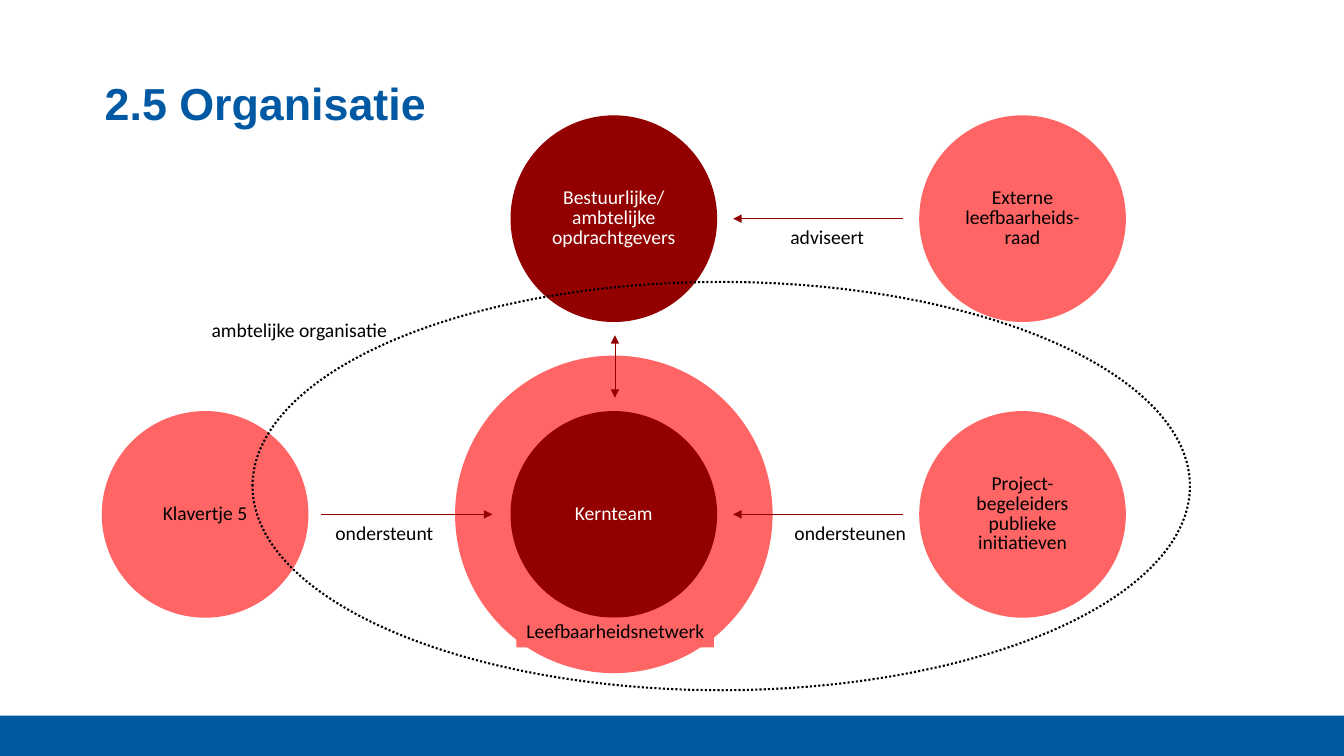
from dataclasses import dataclass

from lxml.etree import SubElement
from pptx import Presentation
from pptx.dml.color import RGBColor
from pptx.enum.dml import MSO_LINE
from pptx.enum.shapes import MSO_CONNECTOR, MSO_SHAPE
from pptx.enum.text import MSO_ANCHOR, PP_ALIGN
from pptx.oxml.ns import qn
from pptx.util import Pt


@dataclass(frozen=True)
class Theme:
    """Colours, fonts and type sizes of the slide."""
    blue: RGBColor = RGBColor(0x00, 0x59, 0xA2)
    dark_red: RGBColor = RGBColor(0x92, 0x00, 0x00)
    light_red: RGBColor = RGBColor(0xFF, 0x65, 0x65)
    white: RGBColor = RGBColor(0xFF, 0xFF, 0xFF)
    black: RGBColor = RGBColor(0x00, 0x00, 0x00)
    title_font: str = "Arial"
    body_font: str = "Calibri"
    title_size: int = 32
    body_size: int = 14


THEME = Theme()
DIAMETER = 147.6
RING_DIAMETER = 226.8
LEFT, CENTRE, RIGHT = 73.9, 365.4 + 73.8 - 1, 730.4
LEFT = 146.5
UPPER, LOWER = 84.2, 295.4


def style_paragraph(paragraph, font_name, size, color, spacing, bold=False):
    """Set the font and line spacing of one paragraph."""
    paragraph.line_spacing = spacing
    paragraph.font.name = font_name
    paragraph.font.size = Pt(size)
    paragraph.font.bold = bold
    paragraph.font.color.rgb = color


def add_filled(slide, kind, box, color):
    """Add a preset shape without outline in the given box."""
    shape = slide.shapes.add_shape(kind, *map(Pt, box))
    shape.shadow.inherit = False
    shape.fill.solid()
    shape.fill.fore_color.rgb = color
    shape.line.fill.background()
    return shape


def add_circle(slide, center, diameter, fill, text="", color=THEME.black):
    """Add a circle around a centre, with centred text if there is any."""
    x, y = center
    box = (x - diameter / 2, y - diameter / 2, diameter, diameter)
    shape = add_filled(slide, MSO_SHAPE.OVAL, box, fill)
    if text:
        frame = shape.text_frame
        frame.word_wrap = True
        frame.vertical_anchor = MSO_ANCHOR.MIDDLE
        frame.text = text
        for paragraph in frame.paragraphs:
            paragraph.alignment = PP_ALIGN.CENTER
            style_paragraph(paragraph, THEME.body_font, THEME.body_size, color, Pt(14))


def add_arrow(slide, start, end, both_ways=False):
    """Add a thin arrow from start to end."""
    arrow = slide.shapes.add_connector(MSO_CONNECTOR.STRAIGHT, *map(Pt, start + end))
    arrow.line.color.rgb = THEME.dark_red
    arrow.line.width = Pt(0.5)
    line = arrow.line._get_or_add_ln()
    for tag in ("a:headEnd", "a:tailEnd") if both_ways else ("a:tailEnd",):
        SubElement(line, qn(tag), type="triangle")
    SubElement(arrow._element.spPr, qn("a:effectLst"))


def add_label(slide, box, text, fill):
    """Add a one-line caption on a plain background."""
    frame = add_filled(slide, MSO_SHAPE.RECTANGLE, box, fill).text_frame
    frame.word_wrap = False
    frame.vertical_anchor = MSO_ANCHOR.TOP
    frame.text = text
    paragraph = frame.paragraphs[0]
    paragraph.alignment = PP_ALIGN.LEFT
    style_paragraph(paragraph, THEME.body_font, THEME.body_size, THEME.black, Pt(14))


def add_title(slide, box, text):
    """Add the slide title."""
    frame = slide.shapes.add_textbox(*map(Pt, box)).text_frame
    frame.word_wrap = True
    frame.vertical_anchor = MSO_ANCHOR.MIDDLE
    frame.text = text
    style_paragraph(frame.paragraphs[0], THEME.title_font, THEME.title_size,
                    THEME.blue, 0.9, bold=True)


def add_boundary(slide, box):
    """Add the dotted ellipse around the civil service."""
    ellipse = slide.shapes.add_shape(MSO_SHAPE.OVAL, *map(Pt, box))
    ellipse.shadow.inherit = False
    ellipse.fill.background()
    ellipse.line.color.rgb = THEME.black
    ellipse.line.width = Pt(1.5)
    ellipse.line.dash_style = MSO_LINE.ROUND_DOT


def add_organisation(slide, box):
    """Place the circles, arrows and captions relative to the diagram box."""
    left, top, width, height = box
    radius = DIAMETER / 2
    first, middle, last = left + radius, left + width / 2, left + width - radius
    upper, lower = top + radius, top + height - radius

    add_circle(slide, (middle, lower), RING_DIAMETER, THEME.light_red)
    circles = [
        (middle, upper, THEME.dark_red, "Bestuurlijke/\nambtelijke opdrachtgevers", THEME.white),
        (last, upper, THEME.light_red, "Externe leefbaarheids-raad", THEME.black),
        (first, lower, THEME.light_red, "Klavertje 5", THEME.black),
        (middle, lower, THEME.dark_red, "Kernteam", THEME.white),
        (last, lower, THEME.light_red, "Project-begeleiders publieke initiatieven", THEME.black),
    ]
    for x, y, fill, text, color in circles:
        add_circle(slide, (x, y), DIAMETER, fill, text, color)

    labels = [
        (middle + 119, upper + 3.5, 67, "adviseert", THEME.white),
        (middle + 122, lower + 4, 94, "ondersteunen", THEME.white),
        (first + 86, lower + 4, 85, "ondersteunt", THEME.white),
        (middle - 69.5, lower + radius, 141, "Leefbaarheidsnetwerk", THEME.light_red),
        (first - 2.5, upper + 70.5, 140, "ambtelijke organisatie", THEME.white),
    ]
    for x, y, label_width, text, fill in labels:
        add_label(slide, (x, y, label_width, 21.2), text, fill)

    for y in (upper, lower):
        add_arrow(slide, (last - radius - 11.5, y), (middle + radius + 11.5, y))
    add_arrow(slide, (first + radius + 9, lower), (middle - radius - 13, lower))
    add_arrow(slide, (middle + 0.8, upper + radius + 9.5),
              (middle + 0.8, lower - radius - 9.5), both_ways=True)
    add_boundary(slide, (left + 107.7, top + 119, 669.6, 291.6))


def main():
    """Build and save the slide."""
    presentation = Presentation()
    presentation.slide_width, presentation.slide_height = Pt(960), Pt(540)
    slide = presentation.slides.add_slide(presentation.slide_layouts[6])
    add_filled(slide, MSO_SHAPE.RECTANGLE, (0, 511.2, 960, 28.8), THEME.blue)
    add_title(slide, (67.7, 41.8, 850.3, 68.4), "2.5 Organisatie")
    add_organisation(slide, (72.7, 82.4, 731.5, 358.8))
    presentation.save("out.pptx")


if __name__ == "__main__":
    main()
